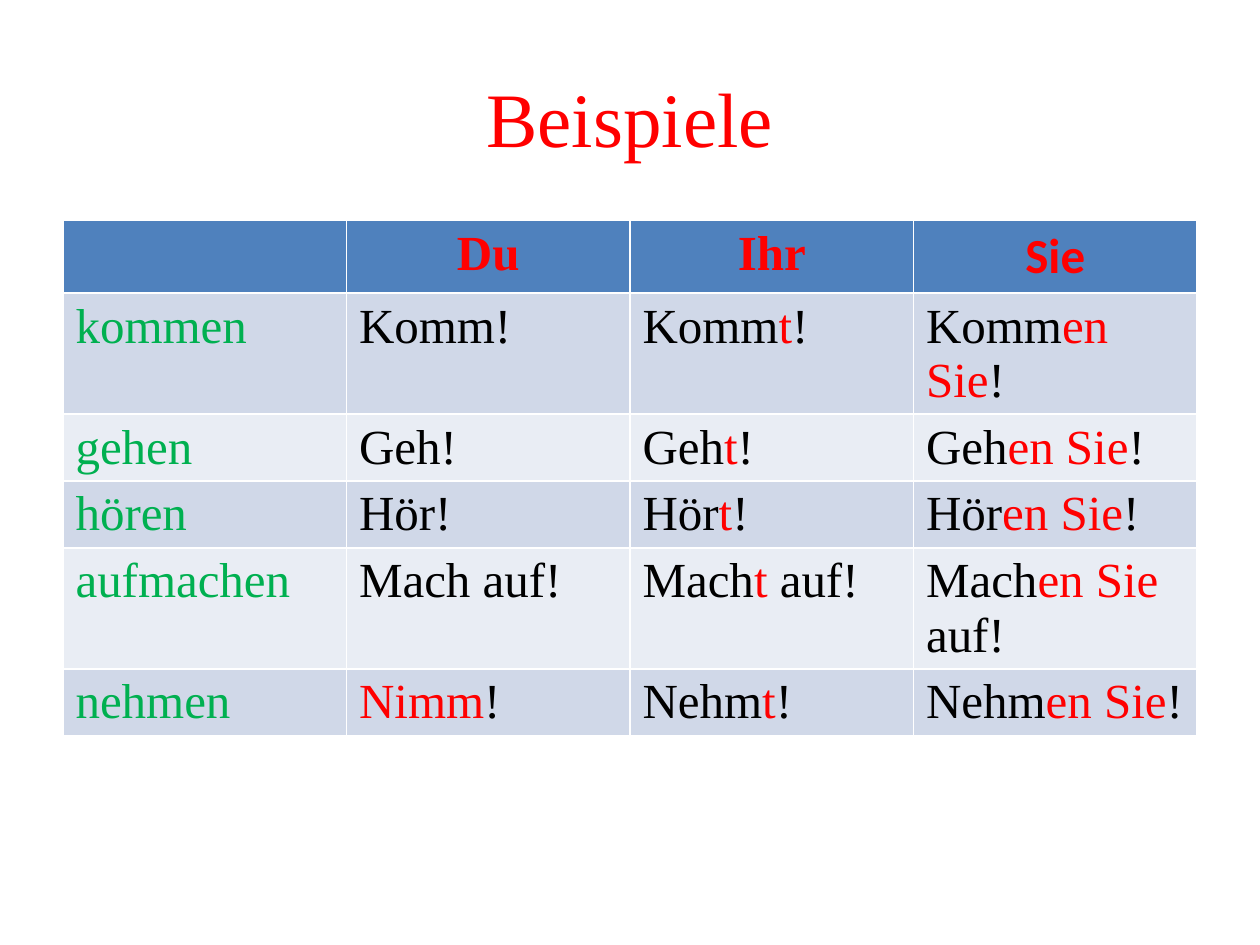
from dataclasses import dataclass

from pptx import Presentation
from pptx.dml.color import RGBColor as Color
from pptx.enum.text import MSO_ANCHOR as Anchor, PP_ALIGN as Align
from pptx.util import Inches, Pt


@dataclass(frozen=True)
class Theme:
    red: Color = Color(0xFF, 0x00, 0x00)
    green: Color = Color(0x00, 0xB0, 0x50)
    black: Color = Color(0x00, 0x00, 0x00)
    header_fill: Color = Color(0x4F, 0x81, 0xBD)
    dark_band: Color = Color(0xD0, 0xD8, 0xE8)
    light_band: Color = Color(0xE9, 0xED, 0xF4)
    serif: str = "Times New Roman"
    sans: str = "Calibri"
    title_size: int = 44
    table_size: int = 28


@dataclass(frozen=True)
class Piece:
    text: str
    color: Color
    font: str = "Times New Roman"
    bold: bool = False


@dataclass(frozen=True)
class Verb:
    infinitive: str
    stem: str
    ending: str = "!"
    du_stem: str = ""  # only for an irregular du form

    def cells(self) -> list[list[Piece]]:
        """Infinitive, then the du, ihr and Sie imperatives."""
        ending = Piece(self.ending, THEME.black)
        stem = Piece(self.stem, THEME.black)
        if self.du_stem:
            du = [Piece(self.du_stem, THEME.red), ending]
        else:
            du = [Piece(self.stem + self.ending, THEME.black)]
        return [
            [Piece(self.infinitive, THEME.green)],
            du,
            [stem, Piece("t", THEME.red), ending],
            [stem, Piece("en Sie", THEME.red), ending],
        ]


THEME = Theme()
HEADERS = [
    [],
    [Piece("Du", THEME.red, bold=True)],
    [Piece("Ihr", THEME.red, bold=True)],
    [Piece("Sie", THEME.red, THEME.sans, bold=True)],
]
VERBS = [
    Verb("kommen", "Komm"),
    Verb("gehen", "Geh"),
    Verb("hören", "Hör"),
    Verb("aufmachen", "Mach", " auf!"),
    Verb("nehmen", "Nehm", du_stem="Nimm"),
]


def add_pieces(paragraph, pieces: list[Piece], size: int, align: Align) -> None:
    paragraph.alignment = align
    for piece in pieces:
        run = paragraph.add_run()
        run.text = piece.text
        run.font.name = piece.font
        run.font.size = Pt(size)
        run.font.bold = piece.bold
        run.font.color.rgb = piece.color


def fill_row(table, row: int, cells: list[list[Piece]], fill: Color, align: Align) -> None:
    table.rows[row].height = Inches(0.41)
    for column, pieces in enumerate(cells):
        cell = table.cell(row, column)
        cell.fill.solid()
        cell.fill.fore_color.rgb = fill
        add_pieces(cell.text_frame.paragraphs[0], pieces, THEME.table_size, align)


def add_title(slide, text: str) -> None:
    title = slide.shapes.title
    title.left, title.top = Inches(0.5), Inches(0.3)
    title.width, title.height = Inches(9), Inches(1.25)
    title.text_frame.vertical_anchor = Anchor.MIDDLE
    add_pieces(title.text_frame.paragraphs[0], [Piece(text, THEME.red)],
               THEME.title_size, Align.CENTER)


def add_verb_table(slide) -> None:
    # The default table style draws the white cell borders
    frame = slide.shapes.add_table(len(VERBS) + 1, len(HEADERS), Inches(0.5),
                                   Inches(1.75), Inches(9), Inches(4.33))
    table = frame.table
    fill_row(table, 0, HEADERS, THEME.header_fill, Align.CENTER)
    for row, verb in enumerate(VERBS, start=1):
        band = THEME.dark_band if row % 2 else THEME.light_band
        fill_row(table, row, verb.cells(), band, Align.LEFT)
    frame.height = Inches(4.33)


def main() -> None:
    presentation = Presentation()
    presentation.slide_width, presentation.slide_height = Inches(10), Inches(7.5)
    slide = presentation.slides.add_slide(presentation.slide_layouts[5])
    add_title(slide, "Beispiele")
    add_verb_table(slide)
    presentation.save("out.pptx")


if __name__ == "__main__":
    main()
